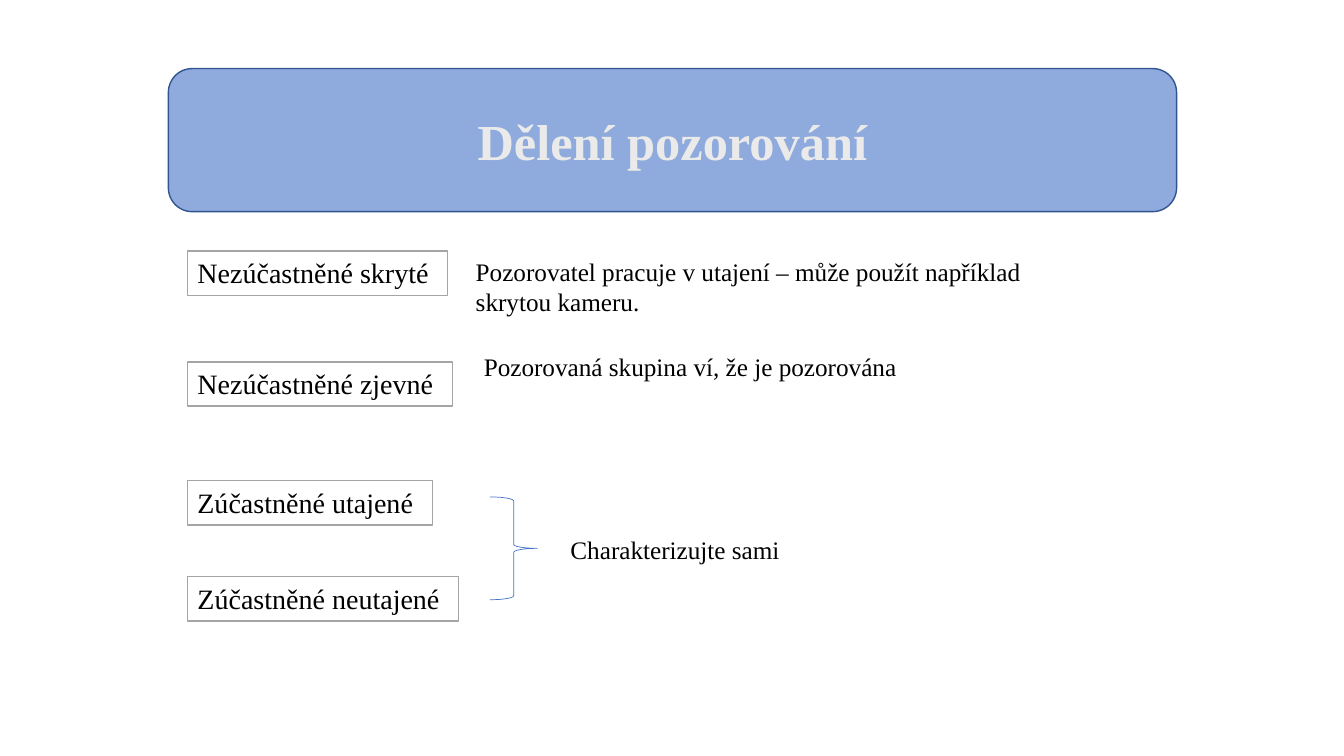
from pptx import Presentation
from pptx.dml.color import RGBColor
from pptx.enum.shapes import MSO_SHAPE
from pptx.enum.text import MSO_ANCHOR, PP_ALIGN
from pptx.util import Pt

PX = 9144
FONT = "Times New Roman"
BLACK = RGBColor(0x00, 0x00, 0x00)
WHITE = RGBColor(0xFF, 0xFF, 0xFF)
GRAY = RGBColor(0xA5, 0xA5, 0xA5)
PALE = RGBColor(0xEB, 0xEA, 0xEA)
BANNER = RGBColor(0x8F, 0xAA, 0xDC)
BANNER_EDGE = RGBColor(0x32, 0x54, 0x91)
BLUE = RGBColor(0x44, 0x72, 0xC4)

LEFT = 186
OBSERVATION_TYPES = [
    ("Nezúčastněné skryté", 249, 258),
    ("Nezúčastněné zjevné", 359, 263),
    ("Zúčastněné utajené", 477, 243),
    ("Zúčastněné neutajené", 572, 269),
]
NOTES = [
    ("Pozorovatel pracuje v utajení – může použít například\nskrytou kameru.",
     (462, 249, 573, 71)),
    ("Pozorovaná skupina ví, že je pozorována", (470, 344, 440, 40)),
    ("Charakterizujte sami", (556, 525, 230, 40)),
]


def emu(box):
    """Turn a box in px into EMU lengths."""
    return [v * PX for v in box]


def add_outlined(s, kind, box, fill, line, width):
    """Add a preset shape with the given fill and outline."""
    sp = s.shapes.add_shape(kind, *emu(box))
    sp.shadow.inherit = False
    if fill is None:
        sp.fill.background()
    else:
        sp.fill.solid()
        sp.fill.fore_color.rgb = fill
    sp.line.color.rgb = line
    sp.line.width = Pt(width)
    return sp


def write(sp, text, size, color=BLACK, align=PP_ALIGN.LEFT,
          anchor=MSO_ANCHOR.TOP, bold=False):
    """Fill a shape with formatted text."""
    tf = sp.text_frame
    tf.word_wrap = True
    tf.vertical_anchor = anchor
    tf.text = text
    for p in tf.paragraphs:
        p.alignment = align
        for r in p.runs:
            r.font.name = FONT
            r.font.size = Pt(size)
            r.font.bold = bold
            r.font.color.rgb = color


def add_banner(s, box, title):
    """Add the rounded title banner."""
    sp = add_outlined(s, MSO_SHAPE.ROUNDED_RECTANGLE, box, BANNER, BANNER_EDGE, 1)
    write(sp, title, 36, PALE, PP_ALIGN.CENTER, MSO_ANCHOR.MIDDLE, True)


def add_type(s, box, label):
    """Add a framed label for one type of observation."""
    sp = add_outlined(s, MSO_SHAPE.RECTANGLE, box, WHITE, GRAY, 1)
    write(sp, label, 20)


def add_note(s, box, text):
    """Add a plain explanatory note."""
    write(s.shapes.add_textbox(*emu(box)), text, 18)


def main():
    """Build the slide and save it."""
    prs = Presentation()
    prs.slide_width, prs.slide_height = 1333 * PX, 750 * PX
    s = prs.slides.add_slide(prs.slide_layouts[6])
    add_banner(s, (167, 68, 1000, 142), "Dělení pozorování")
    for label, top, width in OBSERVATION_TYPES:
        add_type(s, (LEFT, top, width, 44), label)
    add_outlined(s, MSO_SHAPE.RIGHT_BRACE, (486, 493, 47, 102), None, BLUE, 0.5)
    for text, box in NOTES:
        add_note(s, box, text)
    prs.save("out.pptx")


if __name__ == "__main__":
    main()
